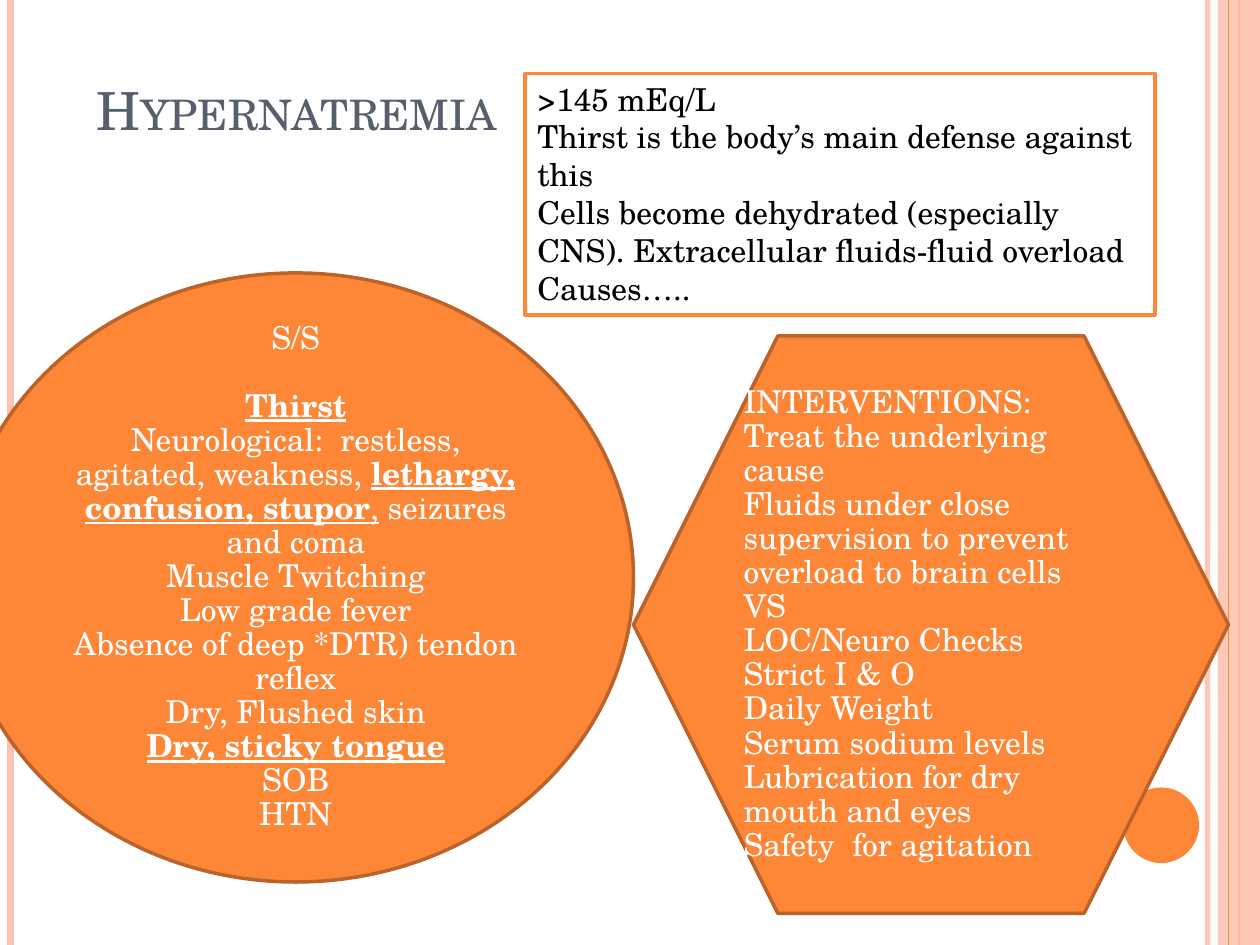
from lxml import etree
from pptx import Presentation
from pptx.dml.color import RGBColor
from pptx.enum.shapes import MSO_CONNECTOR, MSO_SHAPE
from pptx.enum.text import MSO_ANCHOR, MSO_AUTO_SIZE, PP_ALIGN
from pptx.oxml.ns import qn
from pptx.util import Pt

LINE = MSO_CONNECTOR.STRAIGHT
RECT, OVAL, HEX = MSO_SHAPE.RECTANGLE, MSO_SHAPE.OVAL, MSO_SHAPE.HEXAGON
TOP, MID, LOW = MSO_ANCHOR.TOP, MSO_ANCHOR.MIDDLE, MSO_ANCHOR.BOTTOM
LEFT, MIDST = PP_ALIGN.LEFT, PP_ALIGN.CENTER
FIXED = MSO_AUTO_SIZE.NONE

ORANGE = RGBColor(0xFE, 0x86, 0x37)
BROWN = RGBColor(0xBC, 0x63, 0x29)
PEACH = RGBColor(0xFE, 0xC3, 0xAE)
SLATE = RGBColor(0x57, 0x5F, 0x6D)
WHITE = RGBColor(0xFF, 0xFF, 0xFF)
BLACK = RGBColor(0, 0, 0)

FONT = "TeX Gyre Schola"
WIDE, HIGH = 720, 540
BLANK = 19.5  # height of one text line
PLAIN, UNDER, BOLD, BOTH = (False, False), (False, True), (True, False), (True, True)

FACTS = [
    ">145 mEq/L",
    "Thirst is the body’s main defense against this",
    "Cells become dehydrated (especially CNS). Extracellular fluids-fluid overload",
    "Causes…..",
]
# A line is plain text or a list of (text, style) runs
SIGNS = [
    "S/S",
    [("Thirst", BOTH)],
    [("Neurological:  restless, agitated, weakness, ", PLAIN),
     ("lethargy,", BOTH), (" ", BOLD), ("confusion, stupor", BOTH),
     (",", UNDER), (" seizures and coma", PLAIN)],
    "Muscle Twitching",
    "Low grade fever",
    "Absence of deep *DTR) tendon reflex",
    "Dry, Flushed skin",
    [("Dry, sticky tongue", BOTH)],
    "SOB",
    "HTN",
]
CARE = [
    "INTERVENTIONS:",
    "Treat the underlying cause",
    "Fluids under close supervision to prevent overload to brain cells",
    "VS",
    "LOC/Neuro Checks",
    "Strict I & O",
    "Daily Weight",
    "Serum sodium levels",
    "Lubrication for dry mouth and eyes",
    "Safety  for agitation",
]


def fade(part, percent):
    """Set the opacity of the part's first colour."""
    color = next(part.element.spPr.iter(qn("a:srgbClr")))
    etree.SubElement(color, qn("a:alpha")).set("val", str(percent * 1000))


def add_rule(slide, x, top, high, color, width):
    rule = slide.shapes.add_connector(LINE, Pt(x), Pt(top), Pt(x), Pt(top + high))
    rule.line.color.rgb = color
    rule.line.width = Pt(width)
    etree.SubElement(rule.element.spPr, qn("a:effectLst"))
    return rule


def add_form(slide, kind, box, fill, edge=None):
    form = slide.shapes.add_shape(kind, *map(Pt, box))
    form.shadow.inherit = False
    form.fill.solid()
    form.fill.fore_color.rgb = fill
    if edge is None:
        form.line.fill.background()
    else:
        form.line.color.rgb = edge
        form.line.width = Pt(2)
    return form


def add_run(para, text, size, color, style=PLAIN):
    run = para.add_run()
    run.text = text
    font = run.font
    font.name, font.size, font.color.rgb = FONT, Pt(size), color
    font.bold, font.underline = style
    return run


def write(frame, lines, color, anchor, align, pitch):
    frame.word_wrap = True
    frame.vertical_anchor = anchor
    for i, line in enumerate(lines):
        para = frame.add_paragraph() if i else frame.paragraphs[0]
        para.alignment = align
        para.line_spacing = pitch
        for text, style in [(line, PLAIN)] if isinstance(line, str) else line:
            add_run(para, text, 18, color, style)


def add_trim(slide, box):
    """Page edges: rules, right band and corner dot."""
    left, top, wide, high = box
    right = left + wide
    fade(add_rule(slide, right - 30, top, high, PEACH, 3), 93)
    add_rule(slide, left + 6, top, high, PEACH, 4.5)
    add_rule(slide, right - 12, top, high, ORANGE, 1.5)
    fade(add_form(slide, RECT, (right - 24, top, 24, high), PEACH), 87)
    add_rule(slide, right - 18, top, high, ORANGE, 0.75)
    add_form(slide, OVAL, (right - 78, top + high - 90, 43.2, 43.2), ORANGE)


def add_title(slide, box):
    title = slide.shapes.title
    title.left, title.top, title.width, title.height = map(Pt, box)
    frame = title.text_frame
    frame.auto_size = FIXED
    frame.vertical_anchor = LOW
    para = frame.paragraphs[0]
    para.alignment = LEFT
    run = add_run(para, "Hypernatremia", 30, SLATE)
    run.font._element.set("cap", "small")


def add_facts(slide, box):
    form = add_form(slide, RECT, box, WHITE, ORANGE)
    write(form.text_frame, FACTS, BLACK, TOP, LEFT, 1.0)


def add_signs(slide, box):
    form = add_form(slide, OVAL, box, ORANGE, BROWN)
    write(form.text_frame, SIGNS, WHITE, MID, MIDST, 0.9)
    form.text_frame.paragraphs[0].space_after = Pt(BLANK)


def add_care(slide, box):
    form = add_form(slide, HEX, box, ORANGE, BROWN)
    write(form.text_frame, CARE, WHITE, MID, LEFT, 0.9)


def main():
    deck = Presentation()
    deck.slide_width, deck.slide_height = Pt(WIDE), Pt(HIGH)
    slide = deck.slides.add_slide(deck.slide_layouts[5])
    add_trim(slide, (0, 0, WIDE, HIGH))
    add_title(slide, (48, 18, 612, 66))
    add_facts(slide, (300, 42, 360, 138))
    add_signs(slide, (-24, 156, 386, 348))
    add_care(slide, (362, 192, 340, 330))
    deck.save("out.pptx")


if __name__ == "__main__":
    main()
